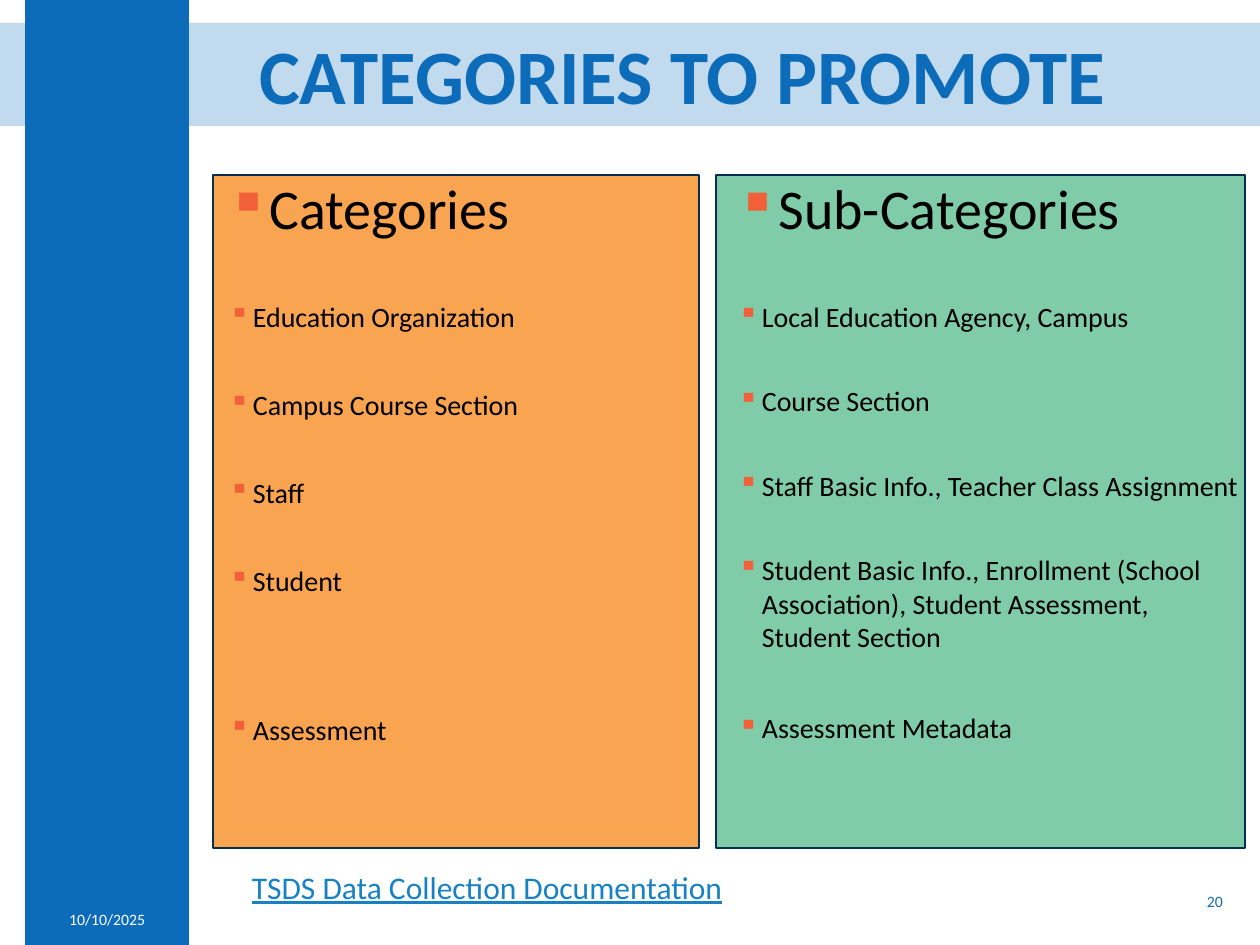
from dataclasses import dataclass

from pptx import Presentation
from pptx.dml.color import RGBColor as Rgb
from pptx.enum.shapes import MSO_SHAPE as Shape
from pptx.enum.text import MSO_ANCHOR as Anchor, PP_ALIGN as Align
from pptx.oxml.ns import qn
from pptx.util import Cm, Pt
from lxml.etree import SubElement


@dataclass(frozen=True)
class Theme:
    font: str = "Calibri"
    blue: str = "0D6CB9"
    white: str = "FFFFFF"
    black: str = "000000"
    outline: str = "062F51"
    orange: str = "F9A451"
    green: str = "80CCA8"
    bullet: str = "F16038"
    link: str = "1682C5"
    title_size: float = 44
    heading_size: float = 32
    link_size: float = 18
    item_size: float = 16
    footer_size: float = 9


class SlideBuilder:
    def __init__(self, slide, theme):
        self.slide = slide
        self.theme = theme

    def panel(self, box, color, alpha=None, outline=None):
        """Draw a filled rectangle; alpha is its opacity in percent."""
        panel = self.slide.shapes.add_shape(Shape.RECTANGLE, *map(Cm, box))
        panel.shadow.inherit = False
        panel.fill.solid()
        panel.fill.fore_color.rgb = Rgb.from_string(color)
        if alpha is not None:
            tint = panel._element.spPr.find(qn("a:solidFill")).find(qn("a:srgbClr"))
            SubElement(tint, qn("a:alpha"), val=str(alpha * 1000))
        if outline:
            panel.line.color.rgb = Rgb.from_string(outline)
            panel.line.width = Pt(1)
        else:
            panel.line.fill.background()

    def frame(self, box, anchor=Anchor.TOP):
        frame = self.slide.shapes.add_textbox(*map(Cm, box)).text_frame
        frame.word_wrap = True
        frame.vertical_anchor = anchor
        return frame

    def styled_run(self, paragraph, text, size, color, **styles):
        run = paragraph.add_run()
        run.text = text
        run.font.color.rgb = Rgb.from_string(color)
        for name, value in {"name": self.theme.font, "size": Pt(size), **styles}.items():
            setattr(run.font, name, value)

    def label(self, box, text, size, color, align=Align.LEFT,
              anchor=Anchor.MIDDLE, spacing=1.0, **styles):
        paragraph = self.frame(box, anchor).paragraphs[0]
        paragraph.alignment = align
        paragraph.line_spacing = spacing
        self.styled_run(paragraph, text, size, color, **styles)

    def bullet(self, paragraph, indent, hanging):
        properties = paragraph._p.get_or_add_pPr()
        properties.set("marL", str(Cm(indent)))
        properties.set("indent", str(-Cm(hanging)))
        color = SubElement(properties, qn("a:buClr"))
        SubElement(color, qn("a:srgbClr"), val=self.theme.bullet)
        SubElement(properties, qn("a:buChar"), char="▪")

    def bullet_list(self, box, heading, items):
        """Add a heading and (text, space before in points) items."""
        theme = self.theme
        frame = self.frame(box)
        first = frame.paragraphs[0]
        self.bullet(first, 0.48, 0.48)
        first.line_spacing = 0.9
        self.styled_run(first, heading, theme.heading_size, theme.black)
        for text, gap in items:
            item = frame.add_paragraph()
            self.bullet(item, 0.51, 0.48)
            item.space_before = Pt(gap)
            self.styled_run(item, text, theme.item_size, theme.black)


def main():
    deck = Presentation()
    deck.slide_width, deck.slide_height = Cm(25.4), Cm(19.05)
    theme = Theme()
    page = SlideBuilder(deck.slides.add_slide(deck.slide_layouts[6]), theme)

    # Title band and side bar
    page.panel((0, 0.46, 25.4, 2.08), theme.blue, alpha=25)
    page.panel((0.51, 0, 3.3, 19.05), theme.blue)
    page.label((0.51, 18.03, 3.3, 1.02), "10/10/2025", theme.footer_size,
               theme.white, Align.CENTER)
    page.label((3.51, 0.56, 20.5, 2.08), "CATEGORIES TO PROMOTE",
               theme.title_size, theme.blue, Align.CENTER, spacing=0.9, bold=True)

    # Column panels
    top, height = 3.53, 13.56
    page.panel((14.43, top, 10.67, height), theme.green, outline=theme.outline)
    page.panel((4.29, top, 9.8, height), theme.orange, outline=theme.outline)

    # Column lists
    page.bullet_list((4.34, top, 9.8, height), "Categories", [
        ("Education Organization", 33),
        ("Campus Course Section", 31),
        ("Staff", 31),
        ("Student", 31),
        ("Assessment", 66),
    ])
    page.bullet_list((14.6, top, 10.67, height), "Sub-Categories", [
        ("Local Education Agency, Campus", 33),
        ("Course Section", 29),
        ("Staff Basic Info., Teacher Class Assignment", 29),
        ("Student Basic Info., Enrollment (School Association), "
         "Student Assessment, Student Section", 29),
        ("Assessment Metadata", 33),
    ])

    # Footer
    page.label((19.18, 17.65, 5.72, 1.02), "20", theme.footer_size,
               theme.blue, Align.RIGHT)
    page.label((4.83, 17.37, 14.86, 1.02), "TSDS Data Collection Documentation",
               theme.link_size, theme.link, anchor=Anchor.TOP, underline=True)

    deck.save("out.pptx")


if __name__ == "__main__":
    main()
